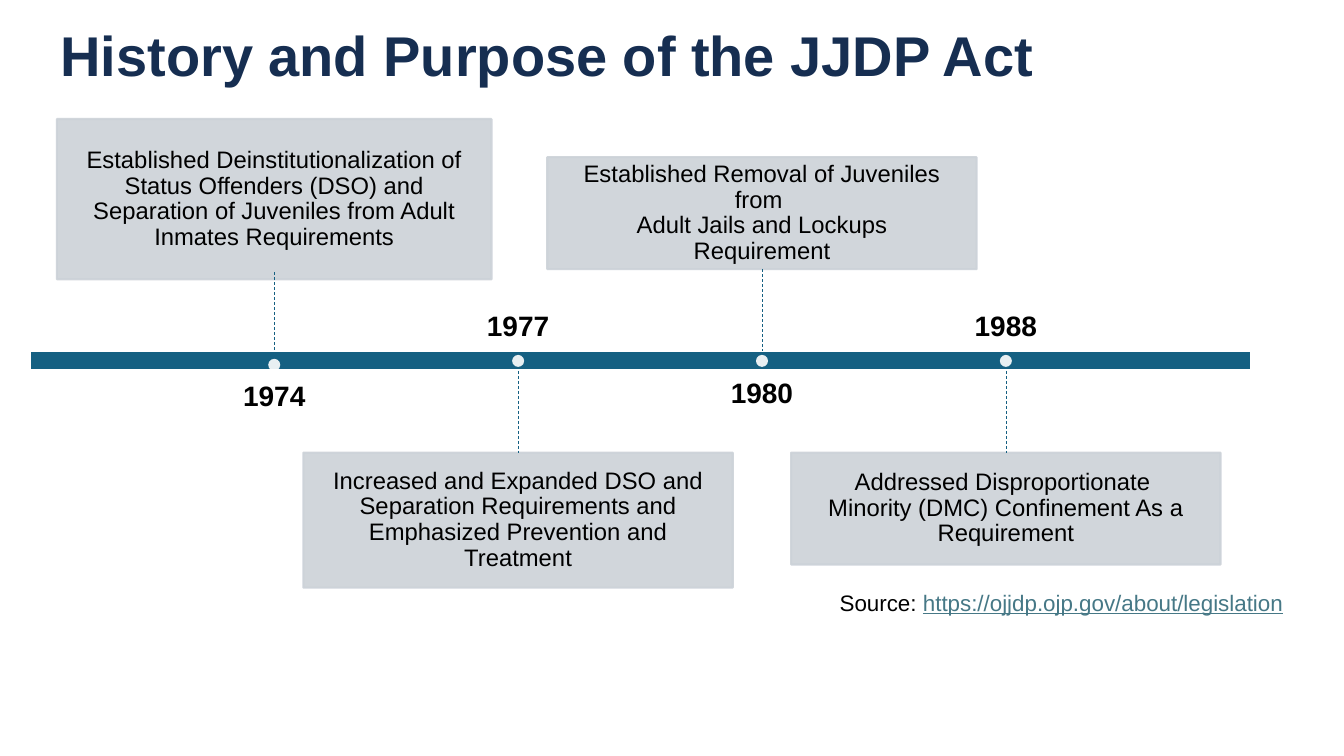
"""Build a timeline slide on the history of the JJDP Act."""
from dataclasses import dataclass

from lxml.etree import SubElement
from pptx import Presentation
from pptx.dml.color import RGBColor
from pptx.enum.dml import MSO_LINE
from pptx.enum.shapes import MSO_CONNECTOR, MSO_SHAPE
from pptx.enum.text import MSO_ANCHOR, MSO_AUTO_SIZE, PP_ALIGN
from pptx.oxml.ns import qn
from pptx.util import Pt


@dataclass(frozen=True)
class Theme:
    """Colours and type sizes."""
    font: str = "Arial"
    navy: str = "162E51"
    teal: str = "156082"
    grey: str = "CCD2D8"
    link: str = "467886"
    white: str = "FFFFFF"
    black: str = "000000"
    head: float = 40
    year: float = 20
    body: float = 17
    note: float = 16


class Deck:
    """Holds the theme and the current slide."""

    def __init__(self, theme):
        self.theme = theme
        self.file = Presentation()
        self.file.slide_width, self.file.slide_height = Pt(960), Pt(540)
        self.slide = self.file.slides.add_slide(self.file.slide_layouts[5])
        self.shapes = self.slide.shapes

    def paint(self, form, color, alpha=100):
        """Fill a shape or line with a colour of the given opacity."""
        form.fill.solid()
        form.fill.fore_color.rgb = RGBColor.from_string(color)
        if alpha < 100:
            for tone in form.fill._xPr.iterfind(f"{qn('a:solidFill')}/{qn('a:srgbClr')}"):
                SubElement(tone, qn("a:alpha"), val=str(alpha * 1000))

    def letter(self, shape, text, size, color, bold=False, inset=0,
               align=PP_ALIGN.CENTER, anchor=MSO_ANCHOR.MIDDLE):
        """Put one styled paragraph in a shape."""
        frame = shape.text_frame
        frame.word_wrap, frame.auto_size = True, MSO_AUTO_SIZE.NONE
        frame.vertical_anchor = anchor
        frame.margin_left = frame.margin_right = Pt(inset)
        frame.margin_top = frame.margin_bottom = Pt(inset)
        para = frame.paragraphs[0]
        para.text, para.alignment, para.line_spacing = text, align, 0.9
        para.font.name, para.font.size, para.font.bold = self.theme.font, Pt(size), bold
        para.font.color.rgb = RGBColor.from_string(color)
        return para

    def title(self, text, *area):
        """Place and format the title."""
        shape = self.shapes.title
        shape.left, shape.top, shape.width, shape.height = map(Pt, area)
        self.letter(shape, text, self.theme.head, self.theme.navy, True, 7.2, PP_ALIGN.LEFT)

    def block(self, kind, area, fill, edge=None, alpha=100):
        """Draw a filled shape with an optional edge."""
        shape = self.shapes.add_shape(kind, *map(Pt, area))
        shape.shadow.inherit = False
        self.paint(shape, fill, alpha)
        if edge:
            self.paint(shape.line, edge, alpha)
            shape.line.width = Pt(1.5)
        else:
            shape.line.fill.background()
        return shape

    def card(self, text, *area):
        """Draw a grey box with centred text."""
        grey = self.theme.grey
        shape = self.block(MSO_SHAPE.RECTANGLE, area, grey, grey, 90)
        self.letter(shape, text, self.theme.body, self.theme.black, inset=13)

    def label(self, text, anchor, *area):
        """Add a year."""
        box = self.shapes.add_textbox(*map(Pt, area))
        self.letter(box, text, self.theme.year, self.theme.black, True, anchor=anchor)

    def stem(self, x, top, end):
        """Draw a dashed upright line."""
        line = self.shapes.add_connector(MSO_CONNECTOR.STRAIGHT, Pt(x), Pt(top), Pt(x), Pt(end))
        self.paint(line.line, self.theme.teal)
        line.line.width, line.line.dash_style = Pt(0.5), MSO_LINE.DASH
        SubElement(line._element.spPr, qn("a:effectLst"))

    def dot(self, x, y, size=8.6):
        """Draw a round mark centred on a point."""
        area = x - size / 2, y - size / 2, size, size
        self.block(MSO_SHAPE.OVAL, area, self.theme.white, alpha=90)

    def source(self, lead, link, *area):
        """Add the source line with an underlined address."""
        box = self.shapes.add_textbox(*map(Pt, area))
        para = self.letter(box, lead, self.theme.note, self.theme.black,
                           align=PP_ALIGN.LEFT, anchor=MSO_ANCHOR.TOP)
        para.line_spacing = 1.0
        run = para.add_run()
        run.text, run.font.underline = link, True
        run.font.color.rgb = RGBColor.from_string(self.theme.link)


EVENTS = [
    ("1974", "Established Deinstitutionalization of Status Offenders (DSO) and "
     "Separation of Juveniles from Adult Inmates Requirements",
     (85, 310.4, 114.5), 272.9, (194.4, 252.7), 260.6),
    ("1977", "Increased and Expanded DSO and Separation Requirements and "
     "Emphasized Prevention and Treatment",
     (323.3, 306.7, 96.5), 206, (265, 323.3), 257.8),
    ("1980", "Established Removal of Juveniles from \vAdult Jails and Lockups Requirement",
     (112.3, 306.7, 80), 270.7, (192.3, 250.6), 257.8),
    ("1988", "Addressed Disproportionate \vMinority (DMC) Confinement As a Requirement",
     (323.3, 306.7, 80), 206, (265, 323.3), 257.8),
]


def main():
    """Draw the slide and save it."""
    theme = Theme()
    deck = Deck(theme)
    deck.title("History and Purpose of the JJDP Act", 36, 14.4, 892.8, 54)
    deck.block(MSO_SHAPE.RECTANGLE, (21.6, 250.6, 872, 13.7), theme.teal, theme.white)
    for i, (year, text, (top, wide, high), mark, ends, spot) in enumerate(EVENTS):
        x = 195.9 + 174.2 * i
        anchor = MSO_ANCHOR.BOTTOM if i % 2 else MSO_ANCHOR.TOP
        deck.label(year, anchor, x - 139.3, mark, 278.6, 38.7)
        deck.card(text, x - wide / 2, top, wide, high)
        deck.stem(x, *ends)
        deck.dot(x, spot)
    deck.source("Source: ", "https://ojjdp.ojp.gov/about/legislation", 599.8, 420.5, 330, 26.6)
    deck.file.save("out.pptx")


if __name__ == "__main__":
    main()
